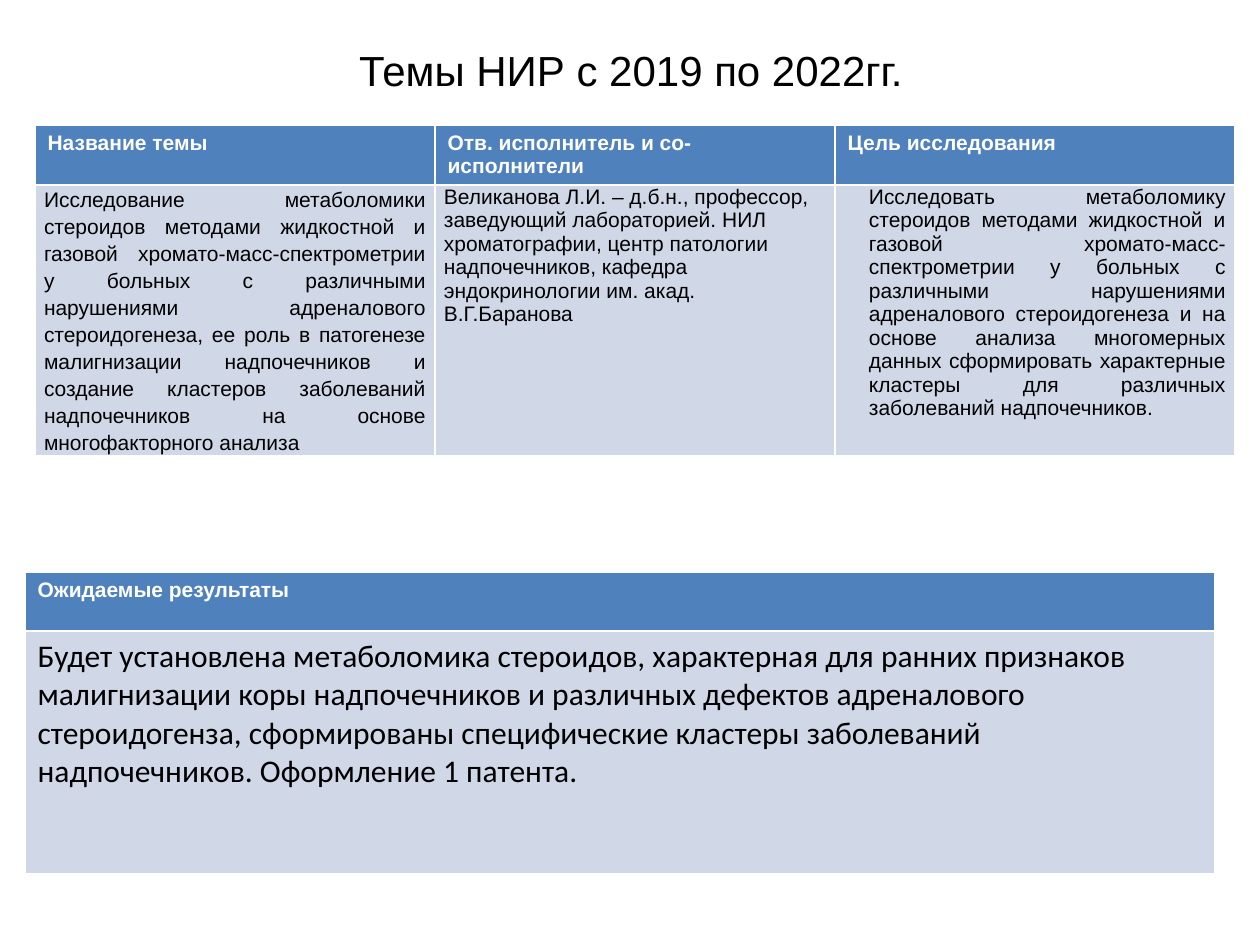
from pptx import Presentation
from pptx import util as u
from pptx.dml import color
from pptx.enum import text

COLORS = {"header": "4F81BD", "body": "D0D8E8", "light": "FFFFFF", "dark": "000000"}
PX_PER_INCH = 126

TITLE = "Темы НИР с 2019 по 2022гг."
TOPIC_HEADERS = ["Название темы", "Отв. исполнитель и со- исполнители", "Цель исследования"]
TOPIC_NAME = (
    "Исследование метаболомики стероидов методами жидкостной и газовой "
    "хромато-масс-спектрометрии у больных с различными нарушениями адреналового "
    "стероидогенеза, ее роль в патогенезе малигнизации надпочечников и создание "
    "кластеров заболеваний надпочечников на основе многофакторного анализа"
)
TOPIC_LEAD = (
    "Великанова Л.И. – д.б.н., профессор, заведующий лабораторией. НИЛ хроматографии, "
    "центр патологии надпочечников, кафедра эндокринологии им. акад. В.Г.Баранова"
)
TOPIC_GOAL = (
    "Исследовать метаболомику стероидов методами жидкостной и газовой "
    "хромато-масс-спектрометрии у больных с различными нарушениями адреналового "
    "стероидогенеза и на основе анализа многомерных данных сформировать характерные "
    "кластеры для различных заболеваний надпочечников."
)
RESULTS_HEADER = "Ожидаемые результаты"
RESULTS_TEXT = (
    "Будет установлена метаболомика стероидов, характерная для ранних признаков "
    "малигнизации коры надпочечников и различных дефектов адреналового стероидогенза, "
    "сформированы специфические кластеры заболеваний надпочечников. Оформление 1 патента."
)


def px(length):
    return u.Emu(round(length * 914400 / PX_PER_INCH))


def add_run(paragraph, words, size, ink, font="Arial", bold=False):
    run = paragraph.add_run()
    run.text = words
    run.font.size = u.Pt(size)
    run.font.name = font
    run.font.bold = bold
    run.font.color.rgb = color.RGBColor.from_string(COLORS[ink])


def fill_cell(cell, fill, words, **style):
    cell.fill.solid()
    cell.fill.fore_color.rgb = color.RGBColor.from_string(COLORS[fill])
    paragraph = cell.text_frame.paragraphs[0]
    add_run(paragraph, words, **style)
    return paragraph


def add_header_table(slide, box, headers, header_height):
    left, top, width, height = box
    frame = slide.shapes.add_table(2, len(headers), px(left), px(top), px(width), px(height))
    table = frame.table
    table.rows[0].height = px(header_height)
    table.rows[1].height = px(height - header_height)
    for cell, words in zip(table.rows[0].cells, headers):
        fill_cell(cell, "header", words, size=12, ink="light", bold=True)
    return table


def place_title(slide, box):
    title = slide.shapes.title
    title.left, title.top, title.width, title.height = map(px, box)
    frame = title.text_frame
    frame.word_wrap = True
    frame.vertical_anchor = text.MSO_ANCHOR.MIDDLE
    paragraph = frame.paragraphs[0]
    paragraph.alignment = text.PP_ALIGN.CENTER
    add_run(paragraph, TITLE, size=24, ink="dark")


def place_topics(slide, box):
    table = add_header_table(slide, box, TOPIC_HEADERS, 60)
    paragraphs = []
    for cell, words in zip(table.rows[1].cells, [TOPIC_NAME, TOPIC_LEAD, TOPIC_GOAL]):
        cell.margin_left = cell.margin_right = px(9)
        cell.margin_top = cell.margin_bottom = 0
        paragraphs.append(fill_cell(cell, "body", words, size=12, ink="dark"))
    name, lead, goal = paragraphs
    name.alignment = goal.alignment = text.PP_ALIGN.JUSTIFY
    name.line_spacing = 1.15
    goal.space_before = u.Pt(6)
    properties = goal._p.get_or_add_pPr()
    properties.set("marL", str(px(25)))
    properties.set("indent", "0")


def place_results(slide, box):
    table = add_header_table(slide, box, [RESULTS_HEADER], 59)
    fill_cell(table.cell(1, 0), "body", RESULTS_TEXT, size=18, ink="dark", font="Calibri")


def main():
    presentation = Presentation()
    presentation.slide_width = px(1260)
    presentation.slide_height = px(945)
    slide = presentation.slides.add_slide(presentation.slide_layouts[5])
    place_title(slide, (64, 16, 1134, 107))
    place_topics(slide, (35, 125, 1200, 330))
    place_results(slide, (25, 572, 1190, 302))
    presentation.save("out.pptx")


if __name__ == "__main__":
    main()
